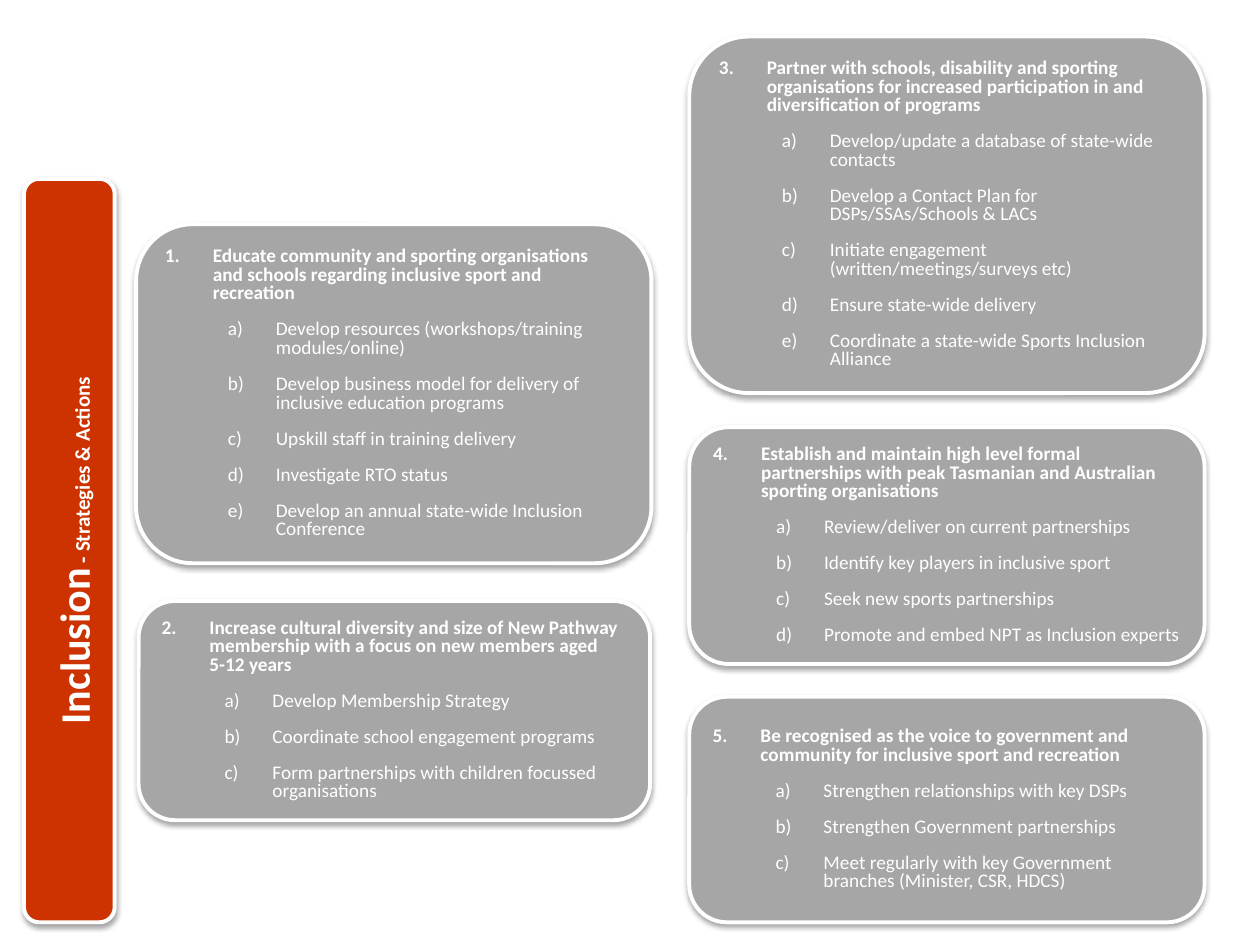
from dataclasses import dataclass

from lxml import etree
from pptx import Presentation
from pptx.dml.color import RGBColor
from pptx.enum.shapes import MSO_SHAPE
from pptx.enum.text import MSO_ANCHOR, PP_ALIGN
from pptx.oxml.ns import qn
from pptx.shapes.autoshape import Shape
from pptx.slide import Slide
from pptx.text.text import _Paragraph, _Run
from pptx.util import Inches, Pt

ROUNDED = MSO_SHAPE.ROUNDED_RECTANGLE
MIDDLE = MSO_ANCHOR.MIDDLE
LEFT, CENTER = PP_ALIGN.LEFT, PP_ALIGN.CENTER


@dataclass(frozen=True)
class Theme:
    """Colours, font, type sizes and spacing of the slide."""

    bar: RGBColor = RGBColor(0xCC, 0x33, 0x00)
    card: RGBColor = RGBColor(0xA6, 0xA6, 0xA6)
    light: RGBColor = RGBColor(0xFF, 0xFF, 0xFF)
    shadow: str = "000000"
    font: str = "Calibri"
    heading: Pt = Pt(24)
    subheading: Pt = Pt(12)
    body: Pt = Pt(11)
    outline: Pt = Pt(2.25)
    space_after: Pt = Pt(10)


@dataclass(frozen=True)
class Box:
    """Position and size in inches."""

    left: float
    top: float
    width: float
    height: float


@dataclass(frozen=True)
class Strategy:
    """A numbered strategy with its lettered actions."""

    box: Box
    title: str
    actions: tuple[str, ...]


THEME = Theme()
HANGING = 0.38
RIGHT_LEFT, CARD_WIDTH = 5.47, 4.09

STRATEGIES = (
    Strategy(
        Box(1.08, 1.78, CARD_WIDTH, 2.69),
        "Educate community and sporting organisations and schools regarding inclusive sport and recreation",
        (
            "Develop resources (workshops/training modules/online)",
            "Develop business model for delivery of inclusive education programs",
            "Upskill staff in training delivery",
            "Investigate RTO status",
            "Develop an annual state-wide Inclusion Conference",
        ),
    ),
    Strategy(
        Box(1.1, 4.77, 4.06, 1.74),
        "Increase cultural diversity and size of New Pathway membership with a focus on new members aged\v5-12 years",
        (
            "Develop Membership Strategy",
            "Coordinate school engagement programs",
            "Form partnerships with children focussed organisations",
        ),
    ),
    Strategy(
        Box(RIGHT_LEFT, 0.29, CARD_WIDTH, 2.83),
        "Partner with schools, disability and sporting organisations for increased participation in and "
        "diversification of programs",
        (
            "Develop/update a database of state-wide contacts",
            "Develop a Contact Plan for DSPs/SSAs/Schools & LACs",
            "Initiate engagement (written/meetings/surveys etc)",
            "Ensure state-wide delivery",
            "Coordinate a state-wide Sports Inclusion Alliance",
        ),
    ),
    Strategy(
        Box(RIGHT_LEFT, 3.39, CARD_WIDTH, 1.88),
        "Establish and maintain high level formal partnerships with peak Tasmanian and Australian "
        "sporting organisations",
        (
            "Review/deliver on current partnerships",
            "Identify key players in inclusive sport",
            "Seek new sports partnerships",
            "Promote and embed NPT as Inclusion experts",
        ),
    ),
    Strategy(
        Box(RIGHT_LEFT, 5.53, CARD_WIDTH, 1.79),
        "Be recognised as the voice to government and community for inclusive sport and recreation",
        (
            "Strengthen relationships with key DSPs",
            "Strengthen Government partnerships",
            "Meet regularly with key Government branches (Minister, CSR, HDCS)",
        ),
    ),
)


def add_shadow(sp: Shape) -> None:
    """Give a shape a soft shadow straight below it."""
    sp.shadow.inherit = False
    effects = sp._element.spPr.find(qn("a:effectLst"))
    shadow = etree.SubElement(
        effects, qn("a:outerShdw"), blurRad=str(Pt(3.1)), dist=str(Pt(1.8)), dir="5400000", rotWithShape="0"
    )
    color = etree.SubElement(shadow, qn("a:srgbClr"), val=THEME.shadow)
    etree.SubElement(color, qn("a:alpha"), val="35000")


def add_panel(s: Slide, box: Box, fill: RGBColor) -> Shape:
    """Draw a rounded panel with a white outline."""
    sp = s.shapes.add_shape(ROUNDED, Inches(box.left), Inches(box.top), Inches(box.width), Inches(box.height))
    sp.fill.solid()
    sp.fill.fore_color.rgb = fill
    sp.line.color.rgb = THEME.light
    sp.line.width = THEME.outline
    add_shadow(sp)
    sp.text_frame.word_wrap = True
    sp.text_frame.vertical_anchor = MIDDLE
    return sp


def format_run(r: _Run, size: Pt, bold: bool) -> None:
    """Set the font of a run."""
    r.font.name = THEME.font
    r.font.size = size
    r.font.bold = bold
    r.font.color.rgb = THEME.light


def format_item(p: _Paragraph, level: int, scheme: str, start: int = 1) -> None:
    """Number a paragraph and format it as a list item."""
    pPr = p._p.get_or_add_pPr()
    pPr.set("marL", str(Inches(HANGING + 0.5 * level)))
    pPr.set("indent", str(-Inches(HANGING)))
    number = etree.SubElement(pPr, qn("a:buAutoNum"), type=scheme)
    if start > 1:
        number.set("startAt", str(start))
    p.level = level
    p.alignment = LEFT
    p.line_spacing = 0.8
    p.space_after = THEME.space_after
    for r in p.runs:
        format_run(r, THEME.body, level == 0)


def add_strategy(s: Slide, number: int, strategy: Strategy) -> None:
    """Draw a strategy card."""
    tf = add_panel(s, strategy.box, THEME.card).text_frame
    p = tf.paragraphs[0]
    p.text = strategy.title
    format_item(p, 0, "arabicPeriod", number)
    for action in strategy.actions:
        p = tf.add_paragraph()
        p.text = action
        format_item(p, 1, "alphaLcParenR")


def add_bar(s: Slide) -> None:
    """Draw the vertical heading bar."""
    tf = add_panel(s, Box(0.19, 1.42, 0.72, 5.9), THEME.bar).text_frame
    tf._txBody.bodyPr.set("vert", "vert270")
    p = tf.paragraphs[0]
    p.alignment = CENTER
    p.line_spacing = 1.15
    p.space_after = THEME.space_after
    for text, size in (("Inclusion", THEME.heading), (" - Strategies & Actions", THEME.subheading)):
        r = p.add_run()
        r.text = text
        format_run(r, size, True)


def main() -> None:
    """Build and save the slide."""
    prs = Presentation()
    prs.slide_width, prs.slide_height = Inches(10), Inches(7.5)
    s = prs.slides.add_slide(prs.slide_layouts[6])
    add_bar(s)
    for number, strategy in enumerate(STRATEGIES, start=1):
        add_strategy(s, number, strategy)
    prs.save("out.pptx")


if __name__ == "__main__":
    main()
